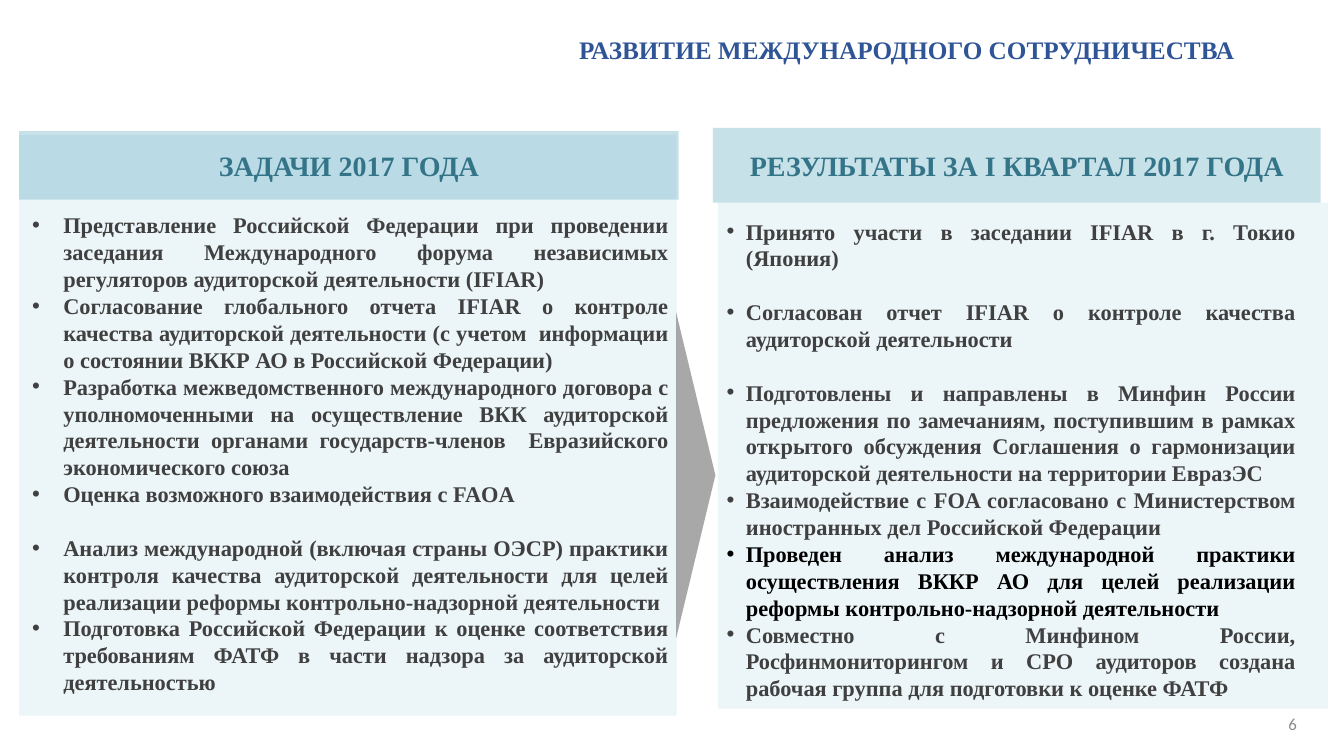
"""Builds the slide on international cooperation: tasks of 2017 and first-quarter results."""
import pptx
import pptx.dml.color
import pptx.enum.shapes
import pptx.enum.text
import pptx.oxml
import pptx.oxml.ns
import pptx.util
from dataclasses import dataclass

Inches = pptx.util.Inches
Pt = pptx.util.Pt
Align = pptx.enum.text.PP_ALIGN
Anchor = pptx.enum.text.MSO_ANCHOR
Shape = pptx.enum.shapes.MSO_SHAPE


@dataclass(frozen=True)
class Theme:
    serif: str = "Times New Roman"
    sans: str = "Calibri"
    title: str = "2F5597"
    panel: str = "4DA0BB"
    heading: str = "347488"
    body: str = "404040"
    accent: str = "000000"
    arrow: str = "808080"
    number: str = "8C8C8C"
    title_size: float = 18
    heading_size: float = 20
    body_size: float = 16
    number_size: float = 12
    line_pitch: float = 19.2
    panel_alpha: int = 10
    heading_alpha: int = 31
    arrow_alpha: int = 68


THEME = Theme()
TITLE = ("РАЗВИТИЕ МЕЖДУНАРОДНОГО СОТРУДНИЧЕСТВА", (4.66, 0.29, 8.67, 0.4))
PAGE_NUMBER = ("6", (12.68, 6.98, 0.27, 0.4))
ARROW = (5.28, 4.52, 3.24, 0.39)

RESULTS = {
    "heading": "РЕЗУЛЬТАТЫ ЗА I КВАРТАЛ 2017 ГОДА",
    "panel_at": (7.12, 2.01, 6.05, 5.02),
    "heading_at": (7.07, 1.27, 6.03, 0.74),
    "list_at": (7.11, 2.11, 5.84, 5.22),
    "indent": 0.19,
    "items": [
        "Принято участи в заседании IFIAR в г. Токио (Япония)",
        "Согласован отчет IFIAR о контроле качества аудиторской деятельности",
        "Подготовлены и направлены в Минфин России предложения по замечаниям, "
        "поступившим в рамках открытого обсуждения Соглашения о гармонизации "
        "аудиторской деятельности на территории ЕвразЭС",
        "Взаимодействие с FOA согласовано с Министерством иностранных дел Российской Федерации",
        "Проведен анализ международной практики осуществления ВККР АО для целей "
        "реализации реформы контрольно-надзорной деятельности",
        "Совместно с Минфином России, Росфинмониторингом и СРО аудиторов создана "
        "рабочая группа для подготовки к оценке ФАТФ",
    ],
    "spaced": {1, 2},
    "accented": {4},
}
TASKS = {
    "heading": "ЗАДАЧИ 2017 ГОДА",
    "panel_at": (0.19, 1.34, 6.52, 5.76),
    "heading_at": (0.19, 1.3, 6.54, 0.68),
    "list_at": (0.22, 2.05, 6.51, 5.47),
    "indent": 0.31,
    "items": [
        "Представление Российской Федерации при проведении заседания Международного "
        "форума независимых регуляторов аудиторской деятельности (IFIAR)",
        "Согласование глобального отчета IFIAR о контроле качества аудиторской "
        "деятельности (с учетом  информации о состоянии ВККР АО в Российской Федерации)",
        "Разработка межведомственного международного договора с уполномоченными на "
        "осуществление ВКК аудиторской деятельности органами государств-членов  "
        "Евразийского экономического союза",
        "Оценка возможного взаимодействия с FAOA",
        "Анализ международной (включая страны ОЭСР) практики контроля качества "
        "аудиторской деятельности для целей реализации реформы контрольно-надзорной деятельности",
        "Подготовка Российской Федерации к оценке соответствия требованиям ФАТФ в "
        "части надзора за аудиторской деятельностью",
    ],
    "spaced": {4},
    "accented": set(),
}
COLUMNS = (RESULTS, TASKS)


def style(para, size, color, font=THEME.serif, bold=True):
    for span in para.runs:
        span.font.name = font
        span.font.size = Pt(size)
        span.font.bold = bold
        span.font.color.rgb = pptx.dml.color.RGBColor.from_string(color)


def add_panel(page, kind, at, color, alpha):
    panel = page.shapes.add_shape(kind, *map(Inches, at))
    panel.shadow.inherit = False
    panel.line.fill.background()
    panel.fill.solid()
    panel.fill.fore_color.rgb = pptx.dml.color.RGBColor.from_string(color)
    tint = panel.fill._xPr.find(".//" + pptx.oxml.ns.qn("a:srgbClr"))
    tint.append(pptx.oxml.parse_xml(
        f'<a:alpha {pptx.oxml.ns.nsdecls("a")} val="{alpha * 1000}"/>'))
    return panel


def add_text(page, at):
    box = page.shapes.add_textbox(*map(Inches, at))
    box.text_frame.word_wrap = True
    return box.text_frame


def add_label(page, label, align, anchor, *look):
    text, at = label
    frame = add_text(page, at)
    frame.vertical_anchor = anchor
    frame.text = text
    frame.paragraphs[0].alignment = align
    style(frame.paragraphs[0], *look)


def add_bullet(para, indent):
    props = para._p.get_or_add_pPr()
    props.set("marL", str(Inches(indent)))
    props.set("indent", str(-Inches(indent)))
    for tag in ('buFont {} typeface="Arial"', 'buChar {} char="•"'):
        props.append(pptx.oxml.parse_xml(
            "<a:" + tag.format(pptx.oxml.ns.nsdecls("a")) + "/>"))


def add_heading(page, column):
    band = add_panel(page, Shape.RECTANGLE, column["heading_at"],
                     THEME.panel, THEME.heading_alpha)
    frame = band.text_frame
    frame.vertical_anchor = Anchor.MIDDLE
    frame.text = column["heading"]
    frame.paragraphs[0].alignment = Align.CENTER
    style(frame.paragraphs[0], THEME.heading_size, THEME.heading)


def add_list(page, column):
    frame = add_text(page, column["list_at"])
    frame.text = "\n".join(column["items"])
    for index, para in enumerate(frame.paragraphs):
        add_bullet(para, column["indent"])
        para.alignment = Align.JUSTIFY
        para.line_spacing = Pt(THEME.line_pitch)
        if index in column["spaced"]:
            para.space_before = Pt(THEME.line_pitch)
        color = THEME.accent if index in column["accented"] else THEME.body
        style(para, THEME.body_size, color)


def main():
    deck = pptx.Presentation()
    deck.slide_width, deck.slide_height = Inches(13.33), Inches(7.5)
    page = deck.slides.add_slide(deck.slide_layouts[6])
    add_label(page, PAGE_NUMBER, Align.RIGHT, Anchor.MIDDLE,
              THEME.number_size, THEME.number, THEME.sans, False)
    add_label(page, TITLE, Align.CENTER, Anchor.TOP, THEME.title_size, THEME.title)
    for column in COLUMNS:
        add_panel(page, Shape.RECTANGLE, column["panel_at"], THEME.panel, THEME.panel_alpha)
        add_heading(page, column)
    arrow = add_panel(page, Shape.FLOWCHART_MERGE, ARROW, THEME.arrow, THEME.arrow_alpha)
    arrow.rotation = 270
    for column in COLUMNS:
        add_list(page, column)
    deck.save("out.pptx")


if __name__ == "__main__":
    main()
